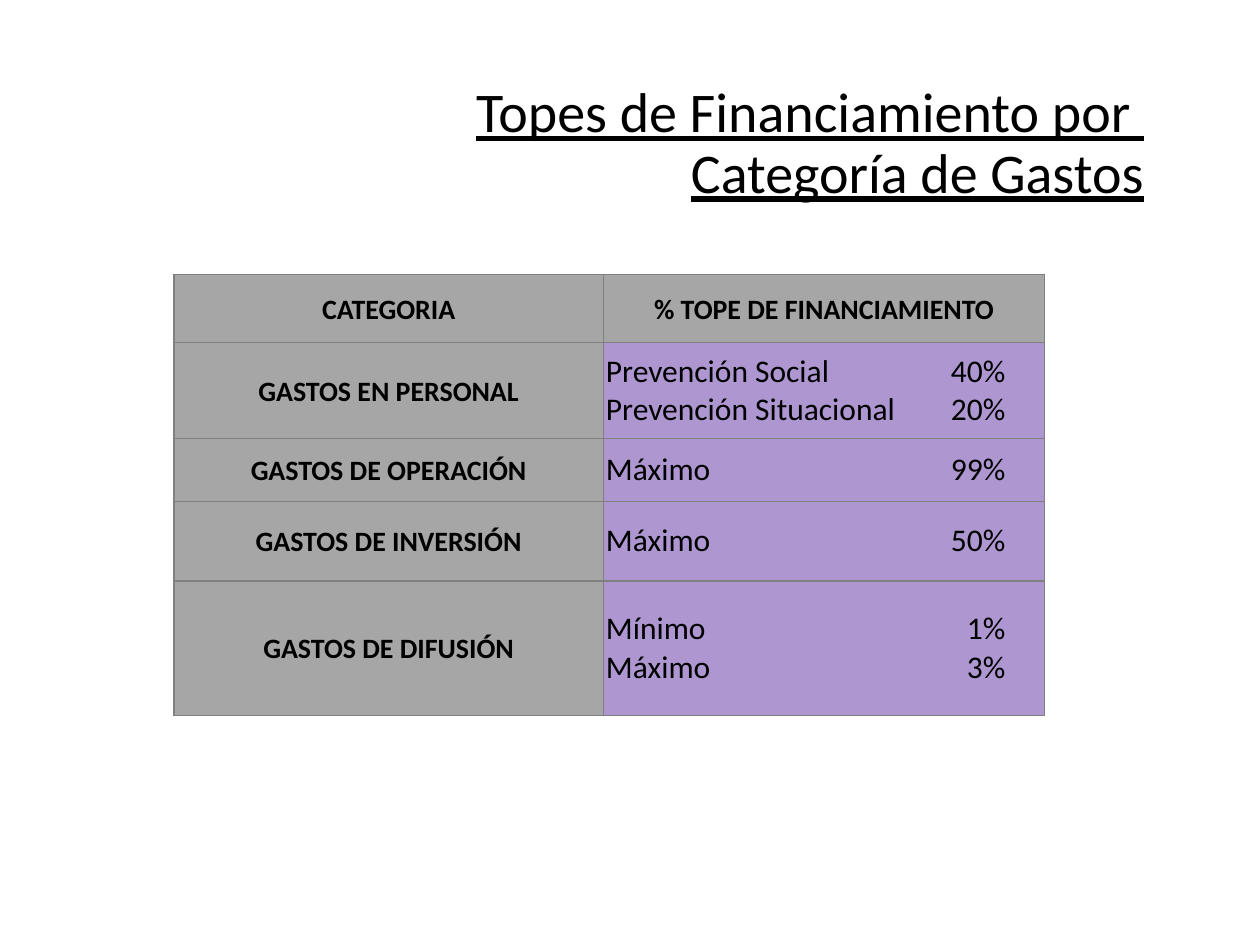
from typing import NamedTuple

from lxml import etree
from pptx import Presentation
from pptx import util as u
from pptx.dml.color import RGBColor
from pptx.enum import text
from pptx.oxml import ns

FONT = "Calibri"
BLACK, GREY, PURPLE, BORDER = "000000", "A6A6A6", "AE97D1", "808080"
COLUMN_WIDTHS = (3.41, 3.5)
HEADER_HEIGHT = 0.54
PERCENT_TAB = 3.17


class Limit(NamedTuple):
    label: str
    percent: str


class Category(NamedTuple):
    name: str
    height: float
    limits: tuple[Limit, ...]


CATEGORIES = (
    Category("GASTOS EN PERSONAL", 0.76,
             (Limit("Prevención Social", "40%"), Limit("Prevención Situacional", "20%"))),
    Category("GASTOS DE OPERACIÓN", 0.5, (Limit("Máximo", "99%"),)),
    Category("GASTOS DE INVERSIÓN", 0.63, (Limit("Máximo", "50%"),)),
    Category("GASTOS DE DIFUSIÓN", 1.07, (Limit("Mínimo", "1%"), Limit("Máximo", "3%"))),
)


def color(value: str) -> RGBColor:
    return RGBColor.from_string(value)


def set_font(paragraph, size: float, bold: bool = False) -> None:
    font = paragraph.font
    font.name, font.size, font.bold = FONT, u.Pt(size), bold
    font.color.rgb = color(BLACK)


def add_borders(cell) -> None:
    properties = cell._tc.get_or_add_tcPr()
    for side in ("a:lnL", "a:lnR", "a:lnT", "a:lnB"):
        line = etree.SubElement(properties, ns.qn(side), w=str(u.Pt(1)))
        fill = etree.SubElement(line, ns.qn("a:solidFill"))
        etree.SubElement(fill, ns.qn("a:srgbClr"), val=BORDER)


def style_cell(cell, fill: str) -> None:
    add_borders(cell)
    cell.fill.solid()
    cell.fill.fore_color.rgb = color(fill)
    cell.vertical_anchor = text.MSO_ANCHOR.MIDDLE
    cell.margin_left = cell.margin_right = u.Inches(0.02)
    cell.margin_top = cell.margin_bottom = 0


def write_heading(cell, heading: str) -> None:
    style_cell(cell, GREY)
    paragraph = cell.text_frame.paragraphs[0]
    paragraph.text = heading
    paragraph.alignment = text.PP_ALIGN.CENTER
    paragraph.line_spacing = 1.07
    set_font(paragraph, 16, bold=True)


def write_limits(cell, limits: tuple[Limit, ...]) -> None:
    """Write one line per limit, with percentages aligned at a right tab."""
    style_cell(cell, PURPLE)
    cell.text_frame.text = "\n".join(f"{limit.label}\t{limit.percent}" for limit in limits)
    for paragraph in cell.text_frame.paragraphs:
        paragraph.alignment = text.PP_ALIGN.LEFT
        set_font(paragraph, 18)
        tabs = etree.SubElement(paragraph._p.get_or_add_pPr(), ns.qn("a:tabLst"))
        etree.SubElement(tabs, ns.qn("a:tab"), pos=str(u.Inches(PERCENT_TAB)), algn="r")
        # The schema places tab stops before the default run properties.
        tabs.getparent().insert(0, tabs)


def add_title(slide) -> None:
    title = slide.shapes.title
    title.left, title.top = u.Inches(0.83), u.Inches(0.73)
    title.width, title.height = u.Inches(8.35), u.Inches(0.84)
    frame = title.text_frame
    frame.auto_size = text.MSO_AUTO_SIZE.NONE
    frame.vertical_anchor = text.MSO_ANCHOR.MIDDLE
    paragraph = frame.paragraphs[0]
    paragraph.text = "Topes de Financiamiento por \vCategoría de Gastos"
    paragraph.alignment = text.PP_ALIGN.RIGHT
    paragraph.line_spacing = 0.9
    paragraph.space_after = u.Pt(2)
    set_font(paragraph, 32)
    paragraph.font.underline = True


def add_limits_table(slide) -> None:
    heights = (HEADER_HEIGHT, *(category.height for category in CATEGORIES))
    table = slide.shapes.add_table(
        len(heights), len(COLUMN_WIDTHS), u.Inches(1.38), u.Inches(2.18),
        u.Inches(sum(COLUMN_WIDTHS)), u.Inches(sum(heights))).table
    for column, width in zip(table.columns, COLUMN_WIDTHS):
        column.width = u.Inches(width)
    for row, height in zip(table.rows, heights):
        row.height = u.Inches(height)
    for index, heading in enumerate(("CATEGORIA", "% TOPE DE FINANCIAMIENTO")):
        write_heading(table.cell(0, index), heading)
    for index, category in enumerate(CATEGORIES, start=1):
        write_heading(table.cell(index, 0), category.name)
        write_limits(table.cell(index, 1), category.limits)


def main() -> None:
    presentation = Presentation()
    presentation.slide_width, presentation.slide_height = u.Inches(10), u.Inches(7.5)
    slide = presentation.slides.add_slide(presentation.slide_layouts.get_by_name("Title Only"))
    add_title(slide)
    add_limits_table(slide)
    presentation.save("out.pptx")


if __name__ == "__main__":
    main()
